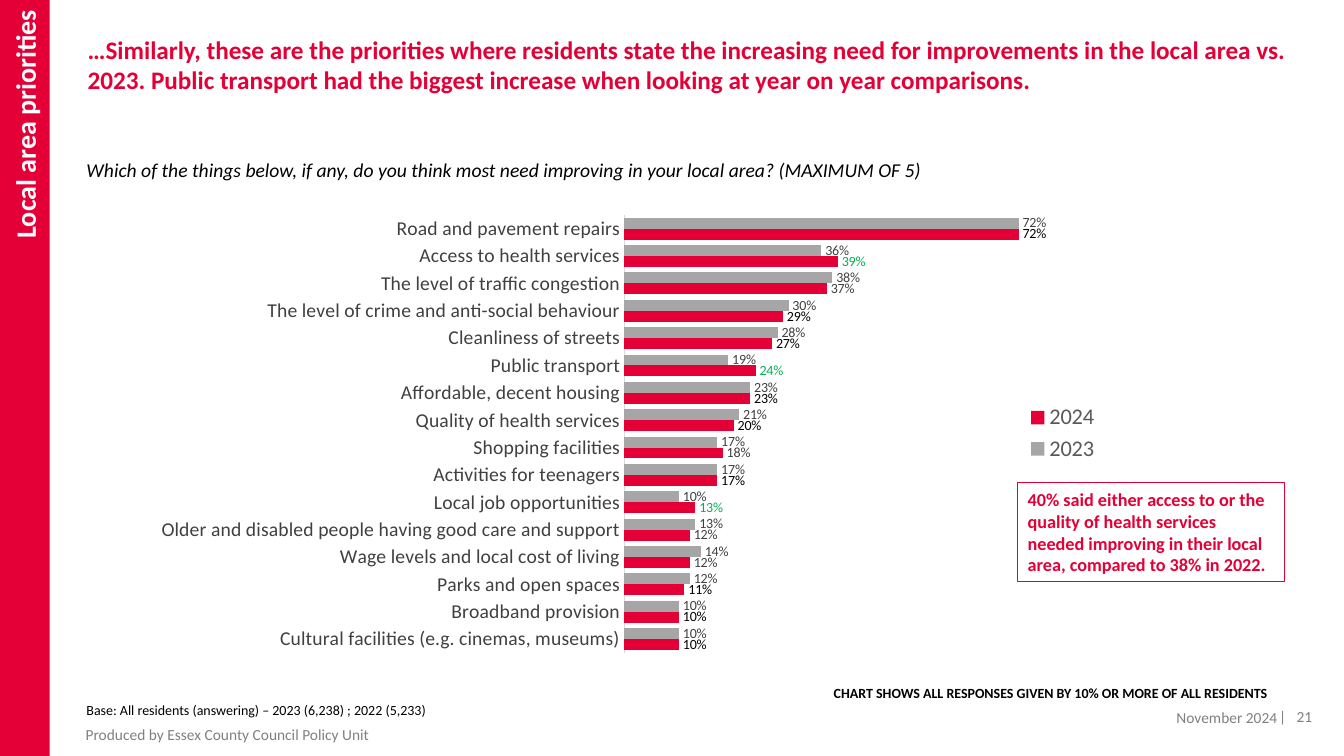
"""Build the slide on local area priorities that residents want improved."""
from dataclasses import dataclass

from lxml import etree
from pptx import Presentation
from pptx import util as u
from pptx.chart import data
from pptx.dml import color
from pptx.enum import chart as ec, shapes, text
from pptx.oxml import ns

Cm, Pt = u.Cm, u.Pt
RGB = color.RGBColor.from_string


@dataclass(frozen=True)
class Theme:
    font: str = "Calibri"
    red: str = "E40037"
    green: str = "00B050"
    grey: str = "A6A6A6"
    footer: str = "808080"
    legend: str = "595959"
    label: str = "404040"
    axis: str = "D9D9D9"
    black: str = "000000"
    white: str = "FFFFFF"
    side_pt: int = 20
    title_pt: int = 18
    legend_pt: int = 16
    body_pt: int = 14
    callout_pt: int = 13
    footer_pt: int = 11
    small_pt: int = 10


T = Theme()
LEFT, RIGHT = text.PP_ALIGN.LEFT, text.PP_ALIGN.RIGHT
TOP, MIDDLE = text.MSO_ANCHOR.TOP, text.MSO_ANCHOR.MIDDLE


def write(sp, words, size, rgb, bold=False, italic=False, align=LEFT,
          anchor=TOP, insets=(0.25, 0.13, 0.25, 0.13)):
    """Fill a shape with one paragraph and return the paragraph."""
    tf = sp.text_frame
    tf.word_wrap, tf.vertical_anchor = True, anchor
    tf.margin_left, tf.margin_top, tf.margin_right, tf.margin_bottom = map(Cm, insets)
    p = tf.paragraphs[0]
    p.alignment = align
    p.font.name, p.font.size, p.font.color.rgb = T.font, Pt(size), RGB(rgb)
    p.font.bold, p.font.italic = bold, italic
    for part in words:
        p.add_run().text = part
    return p


def place(parent, index, box, target=None):
    """Fix a chart part at a box in cm within the chart."""
    for old in parent.findall(ns.qn("c:layout")):
        parent.remove(old)
    layout = etree.Element(ns.qn("c:layout"))
    manual = etree.SubElement(layout, ns.qn("c:manualLayout"))
    settings = [("layoutTarget", target)] if target else []
    settings += [("xMode", "edge"), ("yMode", "edge")]
    settings += [(k, str(v / full)) for k, v, full in zip("xywh", box, CHART_SIZE * 2)]
    for tag, val in settings:
        etree.SubElement(manual, ns.qn(f"c:{tag}")).set("val", val)
    parent.insert(index, layout)


prs = Presentation()
prs.slide_width, prs.slide_height = Cm(33.87), Cm(19.05)
s = prs.slides.add_slide(prs.slide_layouts[6])

PRIORITIES = [
    ("Road and pavement repairs", 0.72, 0.72, T.black),
    ("Access to health services", 0.36, 0.39, T.green),
    ("The level of traffic congestion", 0.38, 0.37, T.label),
    ("The level of crime and anti-social behaviour", 0.30, 0.29, T.black),
    ("Cleanliness of streets", 0.28, 0.27, T.black),
    ("Public transport", 0.19, 0.24, T.green),
    ("Affordable, decent housing", 0.23, 0.23, T.black),
    ("Quality of health services", 0.21, 0.20, T.black),
    ("Shopping facilities", 0.17, 0.18, T.label),
    ("Activities for teenagers", 0.17, 0.17, T.black),
    ("Local job opportunities", 0.10, 0.13, T.green),
    ("Older and disabled people having good care and support", 0.13, 0.12, T.label),
    ("Wage levels and local cost of living", 0.14, 0.12, T.label),
    ("Parks and open spaces", 0.12, 0.11, T.black),
    ("Broadband provision", 0.10, 0.10, T.black),
    ("Cultural facilities (e.g. cinemas, museums)", 0.10, 0.10, T.black),
]
names, values_2023, values_2024, label_colours = zip(*PRIORITIES)
CHART_SIZE = (26.87, 11.66)

cd = data.CategoryChartData(number_format="0%")
cd.categories = names
cd.add_series("2023", values_2023)
cd.add_series("2024", values_2024)
chart = s.shapes.add_chart(ec.XL_CHART_TYPE.BAR_CLUSTERED, Cm(2.67), Cm(4.95),
                           *map(Cm, CHART_SIZE), cd).chart
chart.has_title = False
chart.font.name, chart.font.size = T.font, Pt(T.small_pt)
chart.font.color.rgb = RGB(T.black)

axis = chart.category_axis
axis.reverse_order = True
axis.has_major_gridlines = False
axis.major_tick_mark = axis.minor_tick_mark = ec.XL_TICK_MARK.NONE
axis.format.line.color.rgb, axis.format.line.width = RGB(T.axis), Pt(0.75)
axis.tick_labels.font.name, axis.tick_labels.font.size = T.font, Pt(T.body_pt)
axis.tick_labels.font.color.rgb = RGB(T.label)

scale = chart.value_axis
scale.minimum_scale, scale.maximum_scale = 0, 1
scale.has_major_gridlines = scale.visible = False

plot = chart.plots[0]
plot.gap_width, plot.overlap, plot.vary_by_categories = 50, 0, False
for series, fill in zip(plot.series, (T.grey, T.red)):
    series.format.fill.solid()
    series.format.fill.fore_color.rgb = RGB(fill)
    labels = series.data_labels
    labels.show_value, labels.position = True, ec.XL_LABEL_POSITION.OUTSIDE_END
    labels.number_format, labels.number_format_is_linked = "0%", False
    labels.font.name, labels.font.size = T.font, Pt(T.small_pt)
    labels.font.color.rgb = RGB(T.label)
for i, rgb in enumerate(label_colours):
    if rgb != T.label:
        label = plot.series[1].points[i].data_label
        label.font.name, label.font.size = T.font, Pt(T.small_pt)
        label.font.color.rgb = RGB(rgb)
        label.position = ec.XL_LABEL_POSITION.OUTSIDE_END

chart.has_legend = True
legend = chart.legend
legend.position, legend.include_in_layout = ec.XL_LEGEND_POSITION.RIGHT, False
legend.font.name, legend.font.size = T.font, Pt(T.legend_pt)
legend.font.color.rgb = RGB(T.legend)
place(chart._chartSpace.chart.plotArea, 0, (13.06, 0.47, 13.81, 11.03), "inner")
place(legend._element, 1, (22.96, 5.13, 2.3, 1.68))

side = s.shapes.add_shape(shapes.MSO_SHAPE.RECTANGLE, 0, 0, Cm(1.25), prs.slide_height)
side.shadow.inherit = False
side.fill.solid()
side.fill.fore_color.rgb = RGB(T.red)
side.line.fill.background()
write(side, ["Local area priorities"], T.side_pt, T.white, bold=True, align=RIGHT,
      anchor=MIDDLE, insets=(0.25, 0.25, 0.25, 0.13))
side.text_frame._txBody.bodyPr.set("vert", "vert270")

callout = s.shapes.add_shape(shapes.MSO_SHAPE.RECTANGLE, Cm(25.65), Cm(12.17), Cm(6.73), Cm(2.49))
callout.shadow.inherit = False
callout.fill.background()
callout.line.color.rgb, callout.line.width = RGB(T.red), Pt(0.75)
write(callout, ["40% said either access to or the quality of health services needed "
                "improving in their local area, compared to 38% in 2022."],
      T.callout_pt, T.red, bold=True)

footer = dict(size=T.footer_pt, rgb=T.footer, anchor=MIDDLE)
footer_right = dict(footer, align=RIGHT, insets=(0.25, 0.13, 0, 0.13))
note = dict(size=T.small_pt, rgb=T.black)
TEXTS = [
    ((1.96, 0.74, 31.12, 3.2),
     ["…Similarly, these are the priorities where residents state the increasing need for "
      "improvements in the local area vs. 2023. Public transport had the biggest increase "
      "when looking at year on year comparisons."],
     dict(size=T.title_pt, rgb=T.red, bold=True, insets=(0.25, 0.13, 0.25, 0))),
    ((1.93, 3.86, 30.66, 0.86),
     ["Which of the things below, if any, do you think most need improving in your "
      "local area? (MAXIMUM OF 5)"],
     dict(size=T.body_pt, rgb=T.black, italic=True)),
    ((13.13, 17.12, 19.05, 0.69),
     ["CHART SHOWS ALL RESPONSES GIVEN BY 10% OR MORE OF ALL RESIDENTS"],
     dict(note, bold=True, align=RIGHT)),
    ((1.93, 17.55, 9.53, 0.69),
     ["Base: All residents (answering) – 2023 (6,238) ; 2022 (5,233)"], note),
    ((1.93, 18.31, 16.61, 0.38), ["Produced by Essex County Council Policy Unit"],
     dict(footer, insets=(0.23, 0.13, 0.25, 0.13))),
    ((26.09, 17.88, 6.1, 0.38), ["November 2024"], footer_right),
    ((30.91, 17.86, 2.16, 0.38), ["| ", "21"], footer_right),
]
for box, words, style in TEXTS:
    p = write(s.shapes.add_textbox(*map(Cm, box)), words, **style)
p.runs[0]._r.get_or_add_rPr().set("spc", "250")

prs.save("out.pptx")
